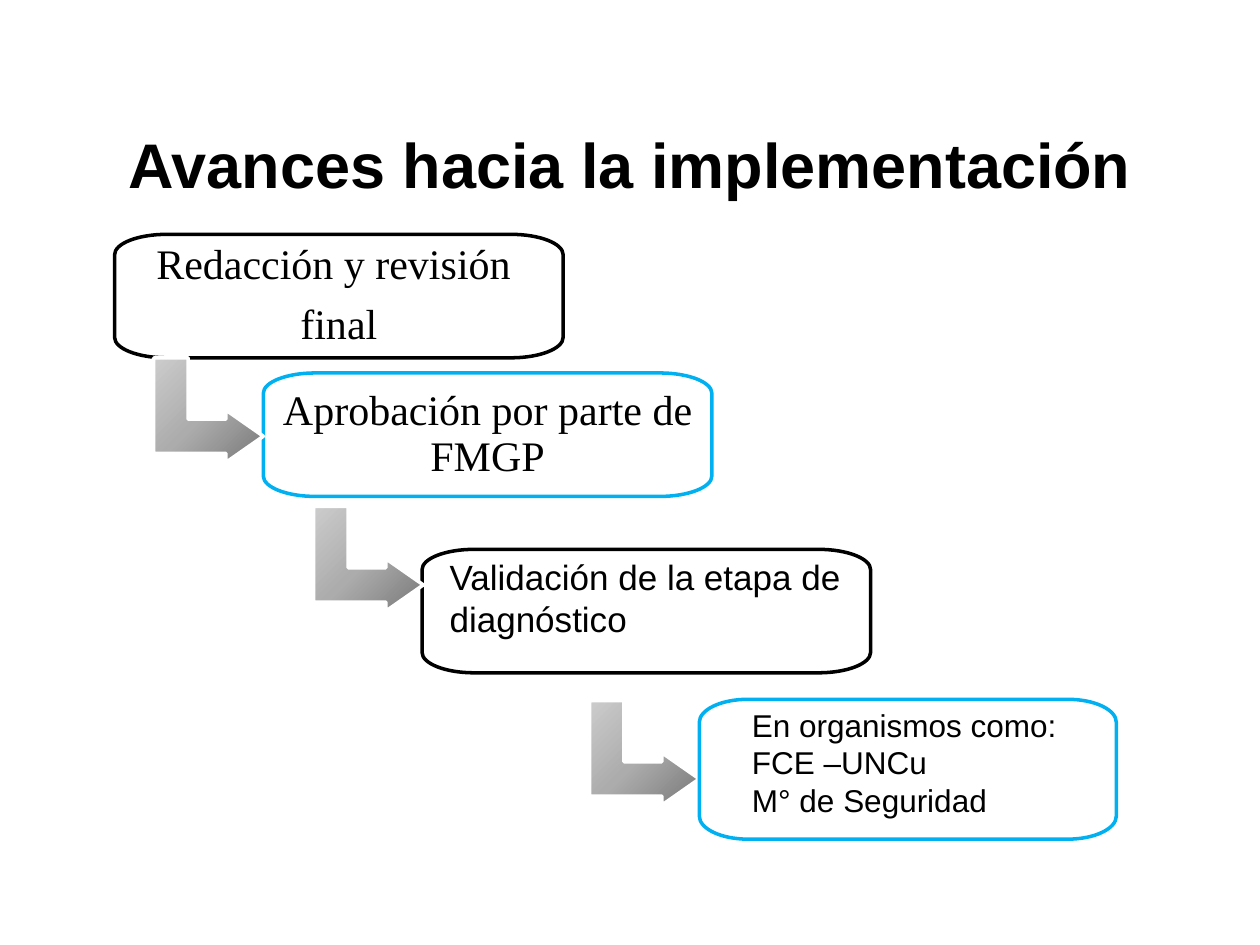
from lxml import etree
from pptx import Presentation
from pptx.dml.color import RGBColor
from pptx.enum.shapes import MSO_SHAPE
from pptx.enum.text import MSO_ANCHOR, PP_ALIGN
from pptx.oxml.ns import qn
from pptx.util import Inches, Pt

CENTER, LEFT = PP_ALIGN.CENTER, PP_ALIGN.LEFT
MIDDLE, TOP = MSO_ANCHOR.MIDDLE, MSO_ANCHOR.TOP
BENT_ARROW = MSO_SHAPE.BENT_UP_ARROW

COLORS = {"black": "000000", "blue": "00B0F0", "white": "FFFFFF"}
ARROW_SHADES = [(0, "797979"), (50, "ACACAC"), (100, "CCCCCC")]
TITLE = "Avances hacia la implementación"
STEPS = [
    ((0.91, 1.86, 3.56, 0.98), "black", ["Redacción y revisión ", "final"]),
    ((2.09, 2.96, 3.56, 0.98), "blue", ["Aprobación por parte de FMGP"]),
    ((3.35, 4.36, 3.56, 0.98), "black", []),
    ((5.55, 5.55, 3.31, 1.11), "blue", []),
]
DETAILS = [
    ((3.47, 4.36, 3.33, 0.77), 20, False, ["Validación de la etapa de", "diagnóstico"]),
    ((5.87, 5.55, 2.76, 1.01), 18, True,
     ["En organismos como:", "FCE –UNCu", "M° de Seguridad"]),
]
ARROWS = [(1.24, 2.82), (2.51, 4.0), (4.7, 5.54)]
ARROW_SIZE = (0.83, 0.87)
ARROW_ADJUSTMENTS = (0.328, 0.25, 0.358)
CORNER_SHARE = (0.116, 0.165)
CURVE_PULL = 0.55


def rgb(name):
    return RGBColor.from_string(COLORS[name])


def write(frame, lines, font, size, align, anchor, bold=False):
    frame.vertical_anchor = anchor
    frame.text = "\n".join(lines)
    for paragraph in frame.paragraphs:
        paragraph.alignment = align
        paragraph.font.name = font
        paragraph.font.size = Pt(size)
        paragraph.font.bold = bold
        paragraph.font.color.rgb = rgb("black")


def outline(shape, color):
    shape.shadow.inherit = False
    shape.line.color.rgb = rgb(color)
    shape.line.width = Pt(2)


def corner_points(left, top, width, height):
    rx, ry = width * CORNER_SHARE[0], height * CORNER_SHARE[1]
    right, bottom = left + width, top + height
    return [
        (left, top + ry), (left + rx, top),
        (right - rx, top), (right, top + ry),
        (right, bottom - ry), (right - rx, bottom),
        (left + rx, bottom), (left, bottom - ry),
    ]


def toward(point, corner):
    return tuple(round(p + (c - p) * CURVE_PULL) for p, c in zip(point, corner))


def round_corners(shape):
    points = list(shape._element.iter(qn("a:pt")))
    places = [(int(p.get("x")), int(p.get("y"))) for p in points]
    for i in range(0, 8, 2):
        start, end = places[i], places[i + 1]
        corner = (start[0], end[1]) if i % 4 == 0 else (end[0], start[1])
        segment = points[i + 1].getparent()
        curve = etree.Element(qn("a:cubicBezTo"))
        for x, y in (toward(start, corner), toward(end, corner), end):
            etree.SubElement(curve, qn("a:pt"), x=str(x), y=str(y))
        segment.getparent().replace(segment, curve)


def add_step(slide, box, color, lines):
    first, *rest = corner_points(*(Inches(v) for v in box))
    builder = slide.shapes.build_freeform(*first, scale=1.0)
    builder.add_line_segments(rest, close=True)
    step = builder.convert_to_shape()
    round_corners(step)
    step.fill.background()
    outline(step, color)
    if lines:
        frame = step.text_frame
        frame.word_wrap = True
        frame.margin_left = frame.margin_right = Inches(0.11)
        frame.margin_top = frame.margin_bottom = Inches(0.11)
        write(frame, lines, "Times New Roman", 24, CENTER, MIDDLE)
        for paragraph in frame.paragraphs:
            paragraph.line_spacing = 0.9
            paragraph.space_after = Pt(8.4)


def add_arrow(slide, position):
    arrow = slide.shapes.add_shape(
        BENT_ARROW, *(Inches(v) for v in position + ARROW_SIZE))
    arrow.rotation = 90
    for i, value in enumerate(ARROW_ADJUSTMENTS):
        arrow.adjustments[i] = value
    outline(arrow, "white")
    arrow.fill.gradient()
    gradient = arrow.fill._xPr.find(qn("a:gradFill"))
    for child in list(gradient):
        gradient.remove(child)
    stops = etree.SubElement(gradient, qn("a:gsLst"))
    for share, shade in ARROW_SHADES:
        stop = etree.SubElement(stops, qn("a:gs"), pos=str(share * 1000))
        etree.SubElement(stop, qn("a:srgbClr"), val=shade)
    radial = etree.SubElement(gradient, qn("a:path"), path="circle")
    etree.SubElement(radial, qn("a:fillToRect"), l="100000", t="100000")


def add_detail(slide, box, size, wrap, lines):
    detail = slide.shapes.add_textbox(*(Inches(v) for v in box))
    detail.text_frame.word_wrap = wrap
    write(detail.text_frame, lines, "Arial", size, LEFT, TOP)


def main():
    deck = Presentation()
    deck.slide_width, deck.slide_height = Inches(10), Inches(7.5)
    slide = deck.slides.add_slide(deck.slide_layouts[5])
    title = slide.shapes.title
    title.left, title.top = Inches(0.75), Inches(0.67)
    title.width, title.height = Inches(8.5), Inches(1.25)
    write(title.text_frame, [TITLE], "Arial", 36, CENTER, MIDDLE, bold=True)
    *upper_steps, last_step = STEPS
    for step in upper_steps:
        add_step(slide, *step)
    for position in ARROWS:
        add_arrow(slide, position)
    add_step(slide, *last_step)
    for detail in DETAILS:
        add_detail(slide, *detail)
    deck.save("out.pptx")


if __name__ == "__main__":
    main()
